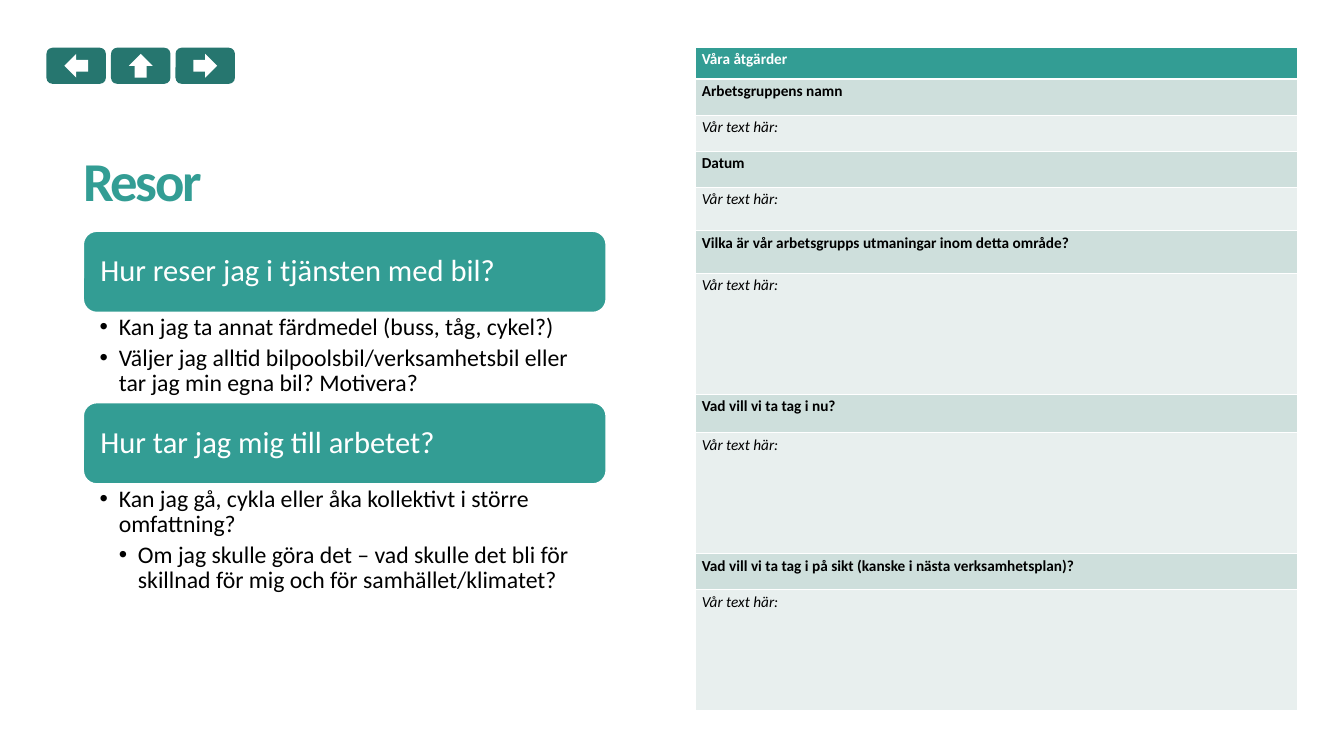
from dataclasses import dataclass

from lxml.etree import SubElement
from pptx import Presentation
from pptx.dml.color import RGBColor
from pptx.enum.shapes import MSO_SHAPE
from pptx.enum.text import MSO_ANCHOR, MSO_AUTO_SIZE, PP_ALIGN
from pptx.oxml.ns import qn
from pptx.util import Pt

COLOURS = {"teal": "339D94", "dark": "26766F", "heading": "CEDFDC",
           "answer": "E8EFEE", "white": "FFFFFF", "black": "000000"}
FONT = "Calibri"
LEFT, COLUMN_WIDTH = 98, 616.25
CARD_HEIGHT = 96
TABLE_LEFT, TABLE_TOP, TABLE_WIDTH = 819.5, 55.5, 709
BUTTON_LEFT, BUTTON_TOP, BUTTON_STEP = 54.75, 56.25, 76
BUTTON_WIDTH, BUTTON_HEIGHT, ARROW_SIZE = 70, 42.5, 28
ANSWER = "Vår text här:"


@dataclass
class Bullet:
    text: str
    level: int = 0


@dataclass
class Topic:
    top: float
    question: str
    list_height: float
    bullets: list[Bullet]


@dataclass
class Section:
    heading: str
    heading_height: float
    answer_height: float


TOPICS = [
    Topic(272.25, "Hur reser jag i tjänsten med bil?", 106, [
        Bullet("Kan jag ta annat färdmedel (buss, tåg, cykel?)"),
        Bullet("Väljer jag alltid bilpoolsbil/verksamhetsbil eller "
               "tar jag min egna bil? Motivera?")]),
    Topic(474.25, "Hur tar jag mig till arbetet?", 137.5, [
        Bullet("Kan jag gå, cykla eller åka kollektivt i större omfattning?"),
        Bullet("Om jag skulle göra det – vad skulle det bli för "
               "skillnad för mig och för samhället/klimatet?", 1)]),
]
SECTIONS = [
    Section("Arbetsgruppens namn", 42.5, 42.5),
    Section("Datum", 42.5, 51),
    Section("Vilka är vår arbetsgrupps utmaningar inom detta område?", 50.5, 142.5),
    Section("Vad vill vi ta tag i nu?", 45.5, 142.5),
    Section("Vad vill vi ta tag i på sikt (kanske i nästa verksamhetsplan)?", 42.5, 142.5),
]


def rgb(name: str) -> RGBColor:
    return RGBColor.from_string(COLOURS[name])


def apply(target, **values) -> None:
    for name, value in values.items():
        setattr(target, name, value)


def place(shape, left: float, top: float, width: float, height: float) -> None:
    apply(shape, left=Pt(left), top=Pt(top), width=Pt(width), height=Pt(height))


def set_frame(frame, left: float, top: float, right: float, bottom: float, anchor) -> None:
    apply(frame, margin_left=Pt(left), margin_top=Pt(top), margin_right=Pt(right),
          margin_bottom=Pt(bottom), vertical_anchor=anchor, word_wrap=True,
          auto_size=MSO_AUTO_SIZE.NONE)


def write(paragraph, text: str, size: float, colour: str,
          bold: bool = False, italic: bool = False):
    span = paragraph.add_run()
    span.text = text
    apply(span.font, name=FONT, size=Pt(size), bold=bold, italic=italic)
    span.font.color.rgb = rgb(colour)
    return span


def add_box(page, kind, left: float, top: float, width: float, height: float, colour: str):
    box = page.shapes.add_shape(kind, Pt(left), Pt(top), Pt(width), Pt(height))
    box.shadow.inherit = False
    box.fill.solid()
    box.fill.fore_color.rgb = rgb(colour)
    box.line.fill.background()
    return box


def add_topic(page, topic: Topic, body) -> None:
    card = add_box(page, MSO_SHAPE.ROUNDED_RECTANGLE, LEFT, topic.top,
                   COLUMN_WIDTH, CARD_HEIGHT, "teal")
    card.line.color.rgb = rgb("white")
    card.line.width = Pt(2)
    set_frame(card.text_frame, 15.5, 10, 15.5, 10, MSO_ANCHOR.MIDDLE)
    paragraph = card.text_frame.paragraphs[0]
    apply(paragraph, alignment=PP_ALIGN.LEFT, line_spacing=0.9)
    write(paragraph, topic.question, 36, "white")

    place(body, LEFT, topic.top + CARD_HEIGHT, COLUMN_WIDTH, topic.list_height)
    set_frame(body.text_frame, 19.5, 3, 16, 3, MSO_ANCHOR.TOP)
    for index, bullet in enumerate(topic.bullets):
        paragraph = body.text_frame.add_paragraph() if index else body.text_frame.paragraphs[0]
        properties = paragraph._p.get_or_add_pPr()
        properties.set("marL", str(Pt(22.5 * (bullet.level + 1))))
        properties.set("indent", str(Pt(-22.5)))
        SubElement(properties, qn("a:buFont"), typeface="Arial")
        SubElement(properties, qn("a:buChar"), char="•")
        apply(paragraph, level=bullet.level, line_spacing=0.9,
              space_before=Pt(0), space_after=Pt(5.6))
        write(paragraph, bullet.text, 28, "black")


def set_borders(cell, top: float, bottom: float) -> None:
    properties = cell._tc.get_or_add_tcPr()
    widths = {"a:lnL": 1, "a:lnR": 1, "a:lnT": top, "a:lnB": bottom}
    for tag, width in widths.items():
        line = SubElement(properties, qn(tag), w=str(Pt(width)))
        fill = SubElement(line, qn("a:solidFill"))
        SubElement(fill, qn("a:srgbClr"), val=COLOURS["white"])


def add_action_table(page) -> None:
    rows = [("Våra åtgärder", 37.5, "teal")]
    for section in SECTIONS:
        rows += [(section.heading, section.heading_height, "heading"),
                 (ANSWER, section.answer_height, "answer")]
    total = sum(height for _, height, _ in rows)
    table = page.shapes.add_table(len(rows), 1, Pt(TABLE_LEFT), Pt(TABLE_TOP),
                                  Pt(TABLE_WIDTH), Pt(total)).table
    for index, (text, height, fill) in enumerate(rows):
        table.rows[index].height = Pt(height)
        cell = table.cell(index, 0)
        set_borders(cell, top=3 if index == 1 else 1, bottom=3 if index == 0 else 1)
        cell.fill.solid()
        cell.fill.fore_color.rgb = rgb(fill)
        write(cell.text_frame.paragraphs[0], text, 18, "black" if index else "white",
              bold=fill != "answer", italic=fill == "answer")


def add_button(page, position: int, rotation: float) -> None:
    left = BUTTON_LEFT + position * BUTTON_STEP
    add_box(page, MSO_SHAPE.ROUNDED_RECTANGLE, left, BUTTON_TOP,
            BUTTON_WIDTH, BUTTON_HEIGHT, "dark")
    arrow = add_box(page, MSO_SHAPE.RIGHT_ARROW, left + (BUTTON_WIDTH - ARROW_SIZE) / 2,
                    BUTTON_TOP + (BUTTON_HEIGHT - ARROW_SIZE) / 2,
                    ARROW_SIZE, ARROW_SIZE, "white")
    arrow.rotation = rotation


def main() -> None:
    deck = Presentation()
    apply(deck, slide_width=Pt(1583.25), slide_height=Pt(890.65))
    page = deck.slides.add_slide(deck.slide_layouts[3])

    # Table of actions
    add_action_table(page)

    # Title
    title = page.shapes.title
    place(title, LEFT, 96.5, COLUMN_WIDTH, 160.5)
    set_frame(title.text_frame, 0, 0, 0, 6, MSO_ANCHOR.BOTTOM)
    paragraph = title.text_frame.paragraphs[0]
    apply(paragraph, alignment=PP_ALIGN.LEFT, line_spacing=0.85)
    span = write(paragraph, "Resor", 64.5, "teal", bold=True)
    span._r.get_or_add_rPr().set("spc", "-280")

    # Questions with their lists
    for number, topic in enumerate(TOPICS, start=1):
        add_topic(page, topic, page.placeholders[number])

    # Navigation buttons: back, up, forward
    for position, rotation in enumerate((180, 270, 0)):
        add_button(page, position, rotation)

    deck.save("out.pptx")


if __name__ == "__main__":
    main()
